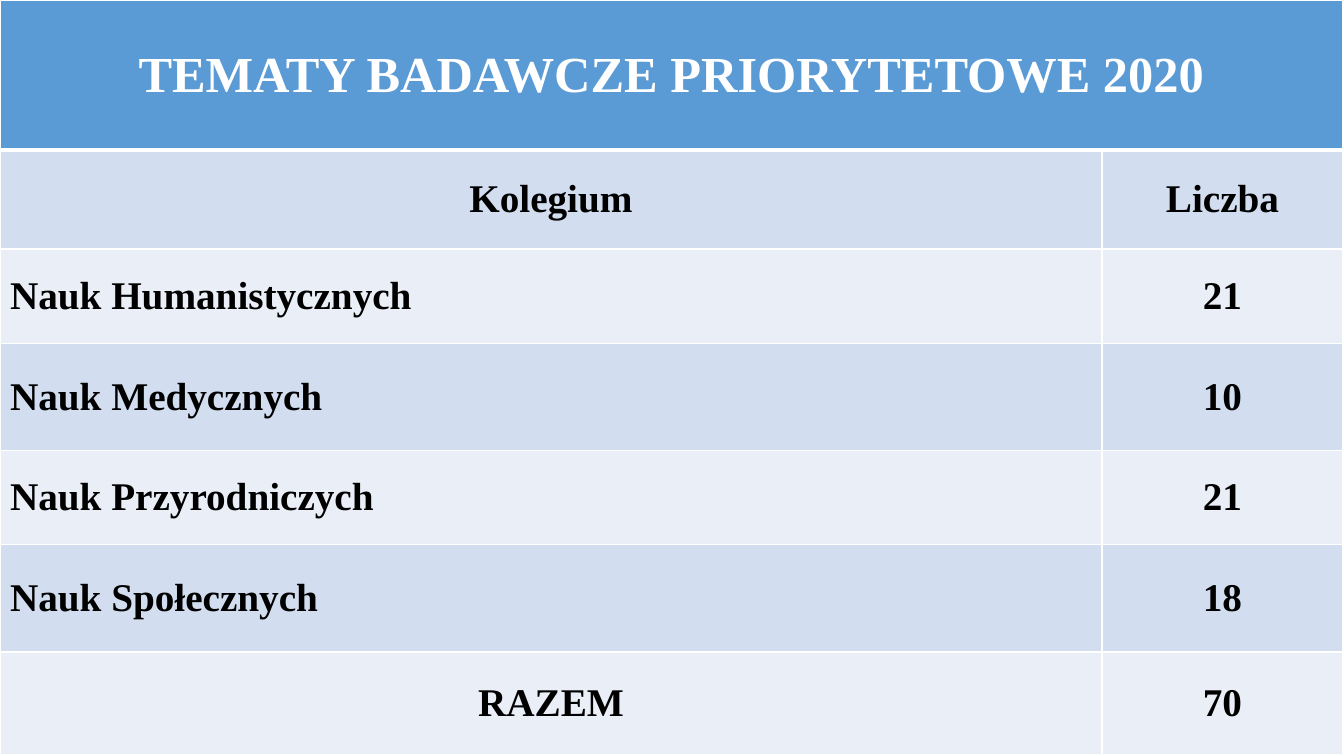
from lxml.etree import SubElement
from pptx import Presentation
from pptx.dml.color import RGBColor
from pptx.enum.text import MSO_ANCHOR, PP_ALIGN
from pptx.oxml.ns import qn
from pptx.util import Inches, Pt

TITLE = "TEMATY BADAWCZE PRIORYTETOWE 2020"
ROWS = [
    (TITLE, ""),
    ("Kolegium", "Liczba"),
    ("Nauk Humanistycznych", "21"),
    ("Nauk Medycznych", "10"),
    ("Nauk Przyrodniczych", "21"),
    ("Nauk Społecznych", "18"),
    ("RAZEM", "70"),
]
COLUMN_WIDTHS = [10.93, 2.39]
ROW_HEIGHTS = [1.49, 0.98, 0.94, 1.06, 0.93, 1.07, 1.02]
COLORS = {
    "title": "5B9BD5",
    "dark band": "D2DEEF",
    "light band": "EAEFF7",
    "border": "FFFFFF",
    "title text": "FFFFFF",
    "text": "000000",
}
FONT = "Times New Roman"


def add_borders(cell, row):
    """Draw white cell borders, thicker between the title and the rows."""
    thick_side = {0: "lnB", 1: "lnT"}.get(row)
    properties = cell._tc.get_or_add_tcPr()
    for side in ("lnL", "lnR", "lnT", "lnB"):
        width = Pt(3 if side == thick_side else 1)
        line = SubElement(properties, qn(f"a:{side}"), w=str(width))
        fill = SubElement(line, qn("a:solidFill"))
        SubElement(fill, qn("a:srgbClr"), val=COLORS["border"])


def format_cell(cell, row, column, text):
    """Fill one table cell with its text, colours and borders."""
    is_title = row == 0
    band = "title" if is_title else "dark band" if row % 2 else "light band"
    is_name = column == 0 and 1 < row < len(ROWS) - 1
    add_borders(cell, row)
    cell.fill.solid()
    cell.fill.fore_color.rgb = RGBColor.from_string(COLORS[band])
    cell.vertical_anchor = MSO_ANCHOR.MIDDLE
    cell.text_frame.text = text
    para = cell.text_frame.paragraphs[0]
    para.alignment = PP_ALIGN.LEFT if is_name else PP_ALIGN.CENTER
    for span in para.runs:
        span.font.name = FONT
        span.font.size = Pt(36 if is_title else 28)
        span.font.bold = True
        color = COLORS["title text" if is_title else "text"]
        span.font.color.rgb = RGBColor.from_string(color)


def main():
    """Build the slide with the table of research topics."""
    deck = Presentation()
    deck.slide_width, deck.slide_height = Inches(13.33), Inches(7.5)
    page = deck.slides.add_slide(deck.slide_layouts[6])
    table = page.shapes.add_table(
        len(ROWS), len(COLUMN_WIDTHS), 0, 0,
        Inches(sum(COLUMN_WIDTHS)), Inches(sum(ROW_HEIGHTS)),
    ).table
    for column, width in zip(table.columns, COLUMN_WIDTHS):
        column.width = Inches(width)
    for row, height in zip(table.rows, ROW_HEIGHTS):
        row.height = Inches(height)
    table.cell(0, 0).merge(table.cell(0, 1))
    for row, texts in enumerate(ROWS):
        for column, text in enumerate(texts):
            format_cell(table.cell(row, column), row, column, text)
    deck.save("out.pptx")


if __name__ == "__main__":
    main()
